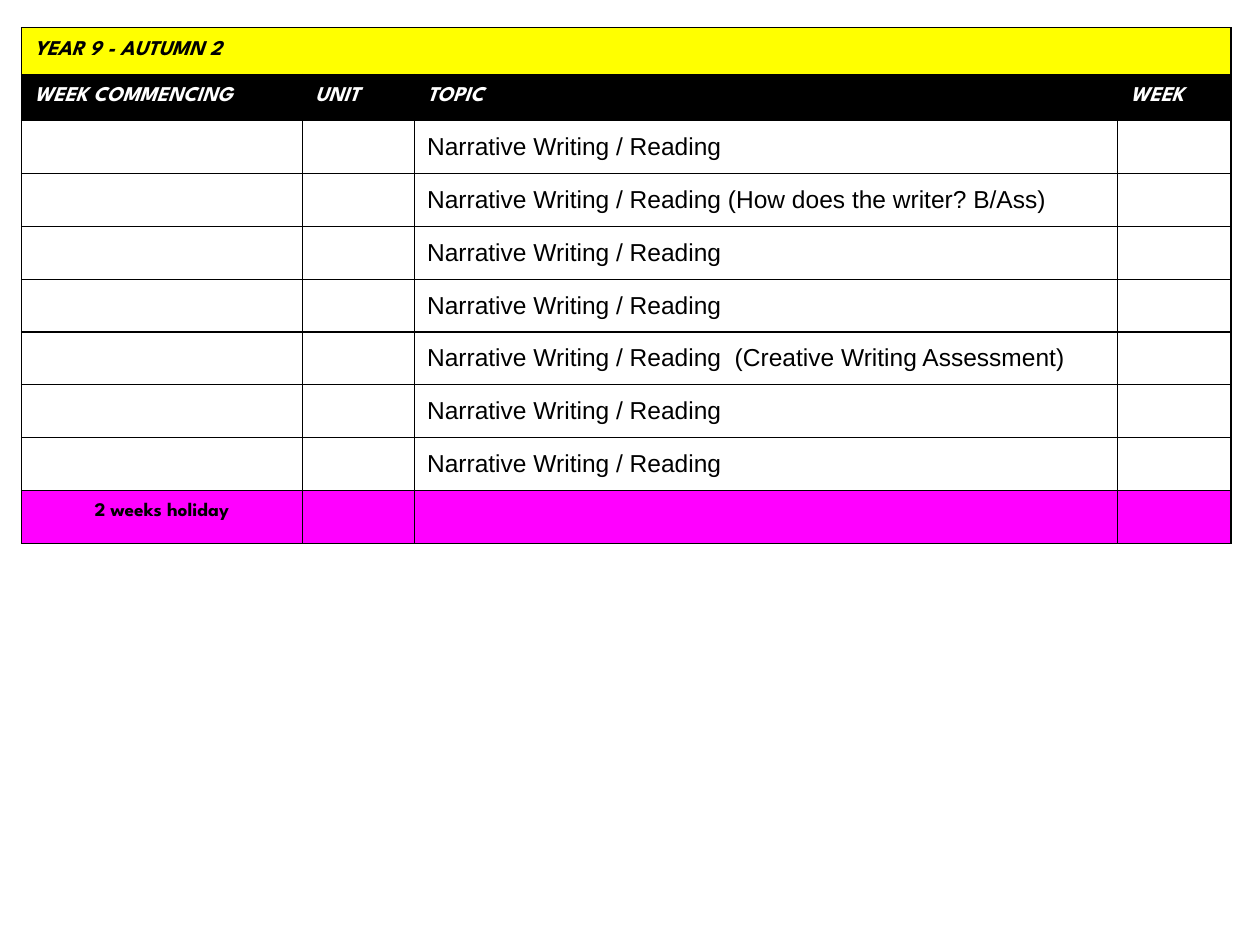
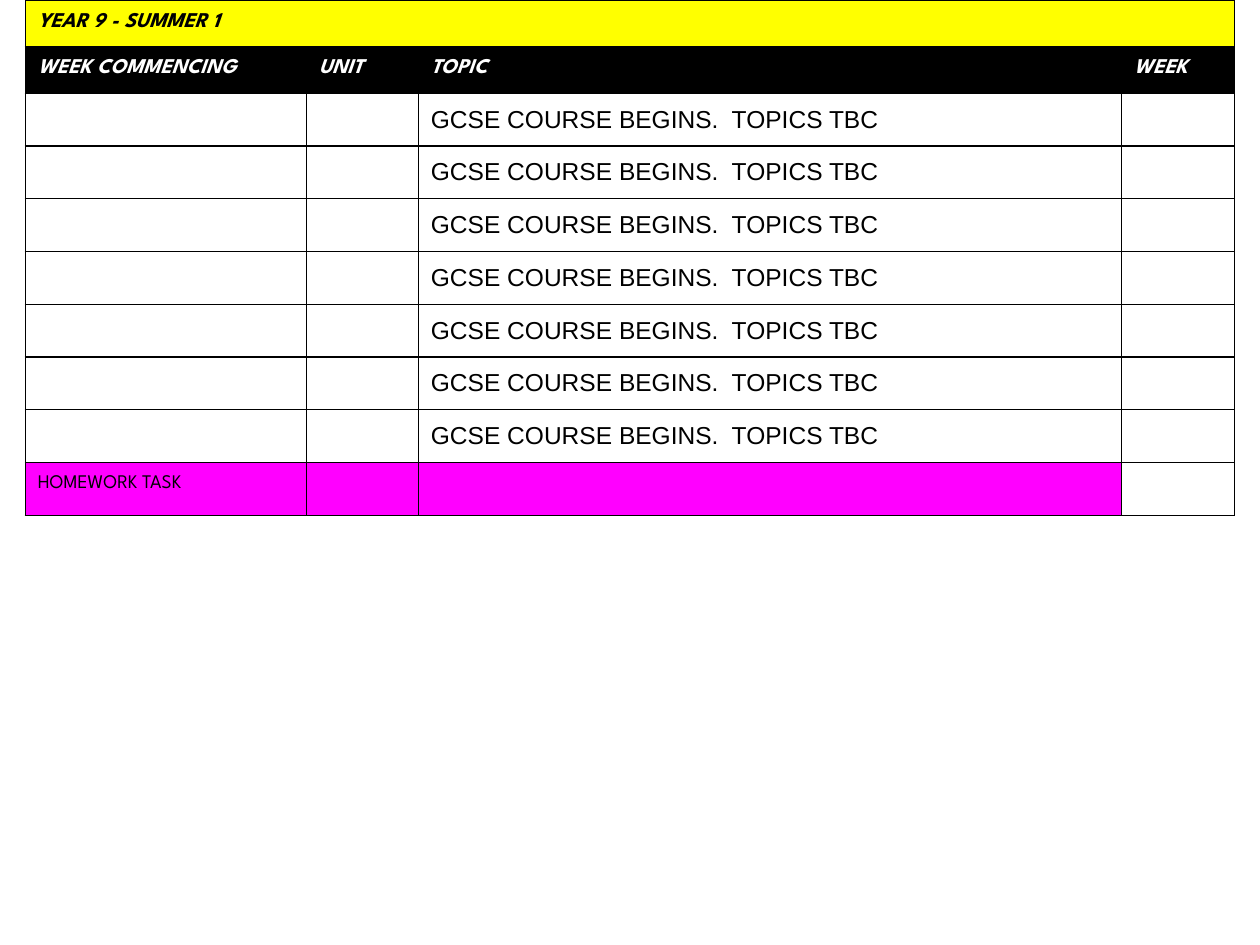
from lxml.etree import SubElement
from pptx import Presentation
from pptx.dml.color import RGBColor
from pptx.enum.text import PP_ALIGN
from pptx.oxml.ns import qn
from pptx.util import Inches, Pt

COLORS = {"black": "000000", "white": "FFFFFF", "yellow": "FFFF00", "pink": "FF00FF"}
HEADING = {"font": "League Spartan", "size": 12, "bold": True, "italic": True}
COLUMNS = [2.23, 0.89, 5.58, 0.9]
HEADERS = ["WEEK COMMENCING", "UNIT", "TOPIC", "WEEK"]
ROW_HEIGHT = 0.37
FOOTER_HEIGHT = 0.42


def write(cell, text, font="Arial", size=14, color="black", bold=False, italic=False,
          align=PP_ALIGN.LEFT):
    cell.margin_left = cell.margin_right = Inches(0.1)
    cell.margin_top = cell.margin_bottom = Inches(0.1)
    p = cell.text_frame.paragraphs[0]
    p.alignment = align
    r = p.add_run()
    r.text = text
    r.font.name = font
    r.font.size = Pt(size)
    r.font.bold = bold
    r.font.italic = italic
    r.font.color.rgb = RGBColor.from_string(COLORS[color])


def style(cell, fill):
    tcPr = cell._tc.get_or_add_tcPr()
    for side in ("lnL", "lnR", "lnT", "lnB"):
        ln = SubElement(tcPr, qn(f"a:{side}"), w=str(Pt(0.75)))
        SubElement(SubElement(ln, qn("a:solidFill")), qn("a:srgbClr"), val=COLORS["black"])
    if fill:
        cell.fill.solid()
        cell.fill.fore_color.rgb = RGBColor.from_string(COLORS[fill])
    else:
        cell.fill.background()


reading = "Narrative Writing / Reading"
terms = [
    {
        "title": "YEAR 9 - AUTUMN 2",
        "left": 0.17,
        "top": 0.22,
        "topics": [reading, f"{reading} (How does the writer? B/Ass)", reading, reading,
                   f"{reading}  (Creative Writing Assessment)", reading, reading],
        "footer": "2 weeks holiday",
        "footer_format": {"bold": True, "align": PP_ALIGN.CENTER},
        "footer_fills": ["pink"] * 4,
    },
    {
        "title": "YEAR 9 - SUMMER 1",
        "left": 0.2,
        "top": 0,
        "topics": ["GCSE COURSE BEGINS.  TOPICS TBC"] * 7,
        "footer": "HOMEWORK TASK",
        "footer_format": {},
        "footer_fills": ["pink"] * 3 + [None],
    },
]

prs = Presentation()
prs.slide_width = Inches(10)
prs.slide_height = Inches(7.5)

for term in terms:
    s = prs.slides.add_slide(prs.slide_layouts[6])
    topics = term["topics"]
    fills = [["yellow"] * 4, ["black"] * 4]
    fills += [[None, "white", "white", None] for topic in topics]
    fills.append(term["footer_fills"])
    heights = [ROW_HEIGHT] * (len(fills) - 1) + [FOOTER_HEIGHT]

    table = s.shapes.add_table(len(fills), len(COLUMNS), Inches(term["left"]),
                               Inches(term["top"]), Inches(sum(COLUMNS)),
                               Inches(sum(heights))).table
    table.first_row = False
    table.horz_banding = False
    for column, width in zip(table.columns, COLUMNS):
        column.width = Inches(width)
    for row, height, row_fills in zip(table.rows, heights, fills):
        row.height = Inches(height)
        for cell, fill in zip(row.cells, row_fills):
            style(cell, fill)

    table.cell(0, 0).merge(table.cell(0, 3))
    write(table.cell(0, 0), term["title"], **HEADING)
    for i, header in enumerate(HEADERS):
        write(table.cell(1, i), header, color="white", **HEADING)
    for i, topic in enumerate(topics, 2):
        write(table.cell(i, 2), topic)
    write(table.cell(len(fills) - 1, 0), term["footer"], font="League Spartan", size=11,
          **term["footer_format"])

prs.save("out.pptx")
